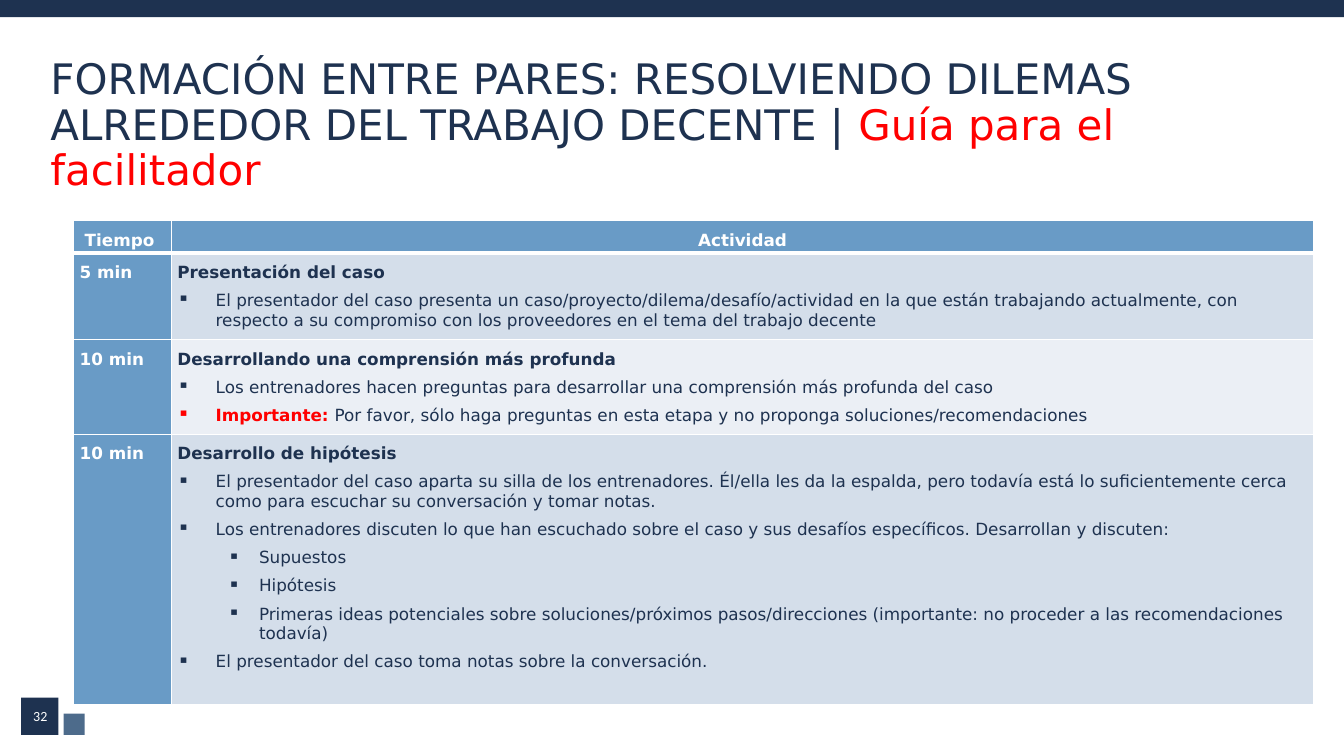
import pptx
import pptx.util
import pptx.dml.color
import pptx.enum.shapes
import pptx.enum.text
import pptx.oxml
import pptx.oxml.ns
from dataclasses import dataclass
from lxml import etree

Inches = pptx.util.Inches
Pt = pptx.util.Pt
RGB = pptx.dml.color.RGBColor.from_string
ALIGN = pptx.enum.text.PP_ALIGN
ANCHOR = pptx.enum.text.MSO_ANCHOR


@dataclass(frozen=True)
class Theme:
    navy: str = "1E3250"
    steel: str = "4D6B8B"
    blue: str = "699BC6"
    band_dark: str = "D4DEEA"
    band_light: str = "EBEFF5"
    red: str = "FF0000"
    white: str = "FFFFFF"
    font: str = "DejaVu Sans"
    number_font: str = "Calibri"
    title_size: int = 30
    table_size: int = 12
    number_size: int = 10


theme = Theme()


def add_run(paragraph, text, color, size, bold=False, font=theme.font):
    run = paragraph.add_run()
    run.text = text
    run.font.name = font
    run.font.size = Pt(size)
    run.font.bold = bold
    run.font.color.rgb = RGB(color)


def style_cell(cell, fill, top, bottom):
    """Fill, margins and white borders; top and bottom are widths in points."""
    cell.fill.solid()
    cell.fill.fore_color.rgb = RGB(fill)
    cell.margin_left = cell.margin_right = Inches(0.06)
    cell.margin_top = cell.margin_bottom = 0
    cell.vertical_anchor = ANCHOR.TOP
    properties = cell._tc.get_or_add_tcPr()
    borders = (("lnL", 1), ("lnR", 1), ("lnT", top), ("lnB", bottom))
    for index, (side, width) in enumerate(borders):
        properties.insert(index, pptx.oxml.parse_xml(
            f'<a:{side} {pptx.oxml.ns.nsdecls("a")} w="{Pt(width)}"><a:solidFill>'
            f'<a:srgbClr val="{theme.white}"/></a:solidFill></a:{side}>'))


presentation = pptx.Presentation()
presentation.slide_width = Inches(13.33)
presentation.slide_height = Inches(7.5)
slide = presentation.slides.add_slide(presentation.slide_layouts[5])

# Top band and page number squares
for left, top, width, height, color in (
    (0, 0, 13.33, 0.17, theme.navy),
    (0.21, 6.92, 0.37, 0.37, theme.navy),
    (0.63, 7.08, 0.21, 0.21, theme.steel),
):
    block = slide.shapes.add_shape(
        pptx.enum.shapes.MSO_SHAPE.RECTANGLE,
        Inches(left), Inches(top), Inches(width), Inches(height))
    block.shadow.inherit = False
    block.fill.solid()
    block.fill.fore_color.rgb = RGB(color)
    block.line.fill.background()

# Title
title = slide.shapes.title
title.left, title.top = Inches(0.4), Inches(0.53)
title.width, title.height = Inches(12.5), Inches(0.86)
title.text_frame.word_wrap = True
title.text_frame.auto_size = pptx.enum.text.MSO_AUTO_SIZE.NONE
title.text_frame.vertical_anchor = ANCHOR.TOP
heading = title.text_frame.paragraphs[0]
heading.alignment = ALIGN.LEFT
heading.line_spacing = 0.9
add_run(heading, "FORMACIÓN ENTRE PARES: RESOLVIENDO DILEMAS ALREDEDOR DEL TRABAJO DECENTE | ",
        theme.navy, theme.title_size)
add_run(heading, "Guía para el facilitador", theme.red, theme.title_size)

# Page number
page_number = slide.shapes.add_textbox(Inches(0.07), Inches(6.99), Inches(0.66), Inches(0.23))
page_number.text_frame.word_wrap = True
page_number.text_frame.vertical_anchor = ANCHOR.MIDDLE
number_line = page_number.text_frame.paragraphs[0]
number_line.alignment = ALIGN.CENTER
add_run(number_line, "32", theme.white, theme.number_size, font=theme.number_font)

# Agenda content: time, activity, steps as (level, highlighted lead, text)
agenda = [
    ("5 min", "Presentación del caso", [
        (0, "", "El presentador del caso presenta un caso/proyecto/dilema/desafío/actividad en la que "
                "están trabajando actualmente, con respecto a su compromiso con los proveedores en el "
                "tema del trabajo decente"),
    ]),
    ("10 min", "Desarrollando una comprensión más profunda", [
        (0, "", "Los entrenadores hacen preguntas para desarrollar una comprensión más profunda del caso"),
        (0, "Importante: ", "Por favor, sólo haga preguntas en esta etapa y no proponga "
                            "soluciones/recomendaciones"),
    ]),
    ("10 min", "Desarrollo de hipótesis", [
        (0, "", "El presentador del caso aparta su silla de los entrenadores. Él/ella les da la espalda, "
                "pero todavía está lo suficientemente cerca como para escuchar su conversación y tomar "
                "notas."),
        (0, "", "Los entrenadores discuten lo que han escuchado sobre el caso y sus desafíos específicos. "
                "Desarrollan y discuten:"),
        (1, "", "Supuestos"),
        (1, "", "Hipótesis"),
        (1, "", "Primeras ideas potenciales sobre soluciones/próximos pasos/direcciones (importante: no "
                "proceder a las recomendaciones todavía)"),
        (0, "", "El presentador del caso toma notas sobre la conversación."),
    ]),
]
step_indents = [(0.38, -0.38), (0.81, -0.31)]

# Agenda table
agenda_table = slide.shapes.add_table(
    len(agenda) + 1, 2, Inches(0.73), Inches(2.19), Inches(12.3), Inches(4.8)).table
for column, width in zip(agenda_table.columns, (0.97, 11.33)):
    column.width = Inches(width)
for row, height in zip(agenda_table.rows, (0.32, 0.86, 0.94, 2.68)):
    row.height = Inches(height)

# Row labels and activity names
labels = [("Tiempo ", "Actividad")] + [(time, activity) for time, activity, _ in agenda]
for row_index, row_labels in enumerate(labels):
    for column_index, label in enumerate(row_labels):
        cell = agenda_table.cell(row_index, column_index)
        is_header = row_index == 0
        is_activity = column_index == 1 and not is_header
        band = theme.band_dark if row_index % 2 else theme.band_light
        style_cell(cell, band if is_activity else theme.blue,
                   top=3 if row_index == 1 else 1, bottom=3 if is_header else 1)
        label_line = cell.text_frame.paragraphs[0]
        if is_header:
            label_line.alignment = ALIGN.CENTER
        else:
            label_line.alignment = ALIGN.LEFT if is_activity else ALIGN.JUSTIFY
        label_line.line_spacing = 1.5
        label_line.space_before = Pt(6)
        add_run(label_line, label, theme.navy if is_activity else theme.white,
                theme.table_size, bold=True)

# Bulleted steps under each activity
for row_index, (_, _, steps) in enumerate(agenda, start=1):
    activity_text = agenda_table.cell(row_index, 1).text_frame
    for level, lead, text in steps:
        step = activity_text.add_paragraph()
        step.level = level
        step.space_before = Pt(6)
        margin, indent = step_indents[level]
        properties = step._p.get_or_add_pPr()
        properties.set("marL", str(Inches(margin)))
        properties.set("indent", str(Inches(indent)))
        etree.SubElement(properties, pptx.oxml.ns.qn("a:buChar")).set("char", "▪")
        if lead:
            add_run(step, lead, theme.red, theme.table_size, bold=True)
        add_run(step, text, theme.navy, theme.table_size)

presentation.save("out.pptx")
